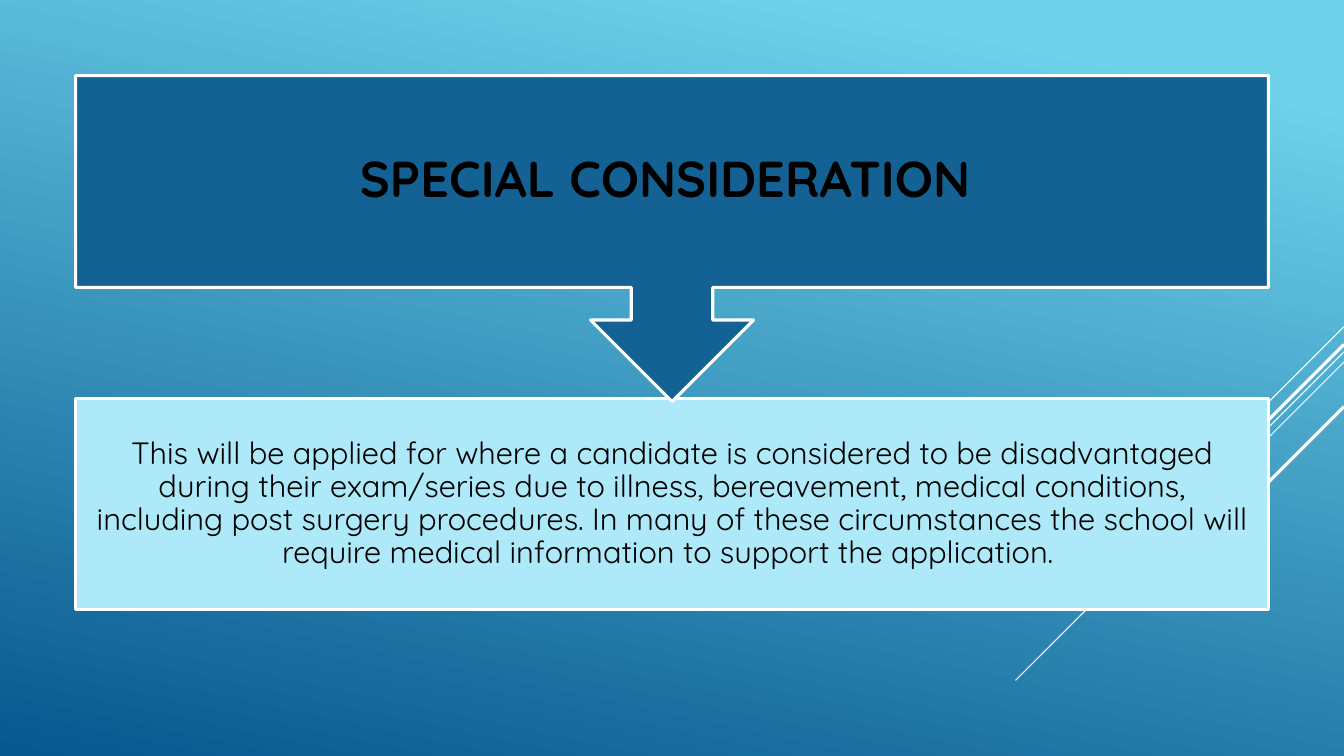
from lxml import etree
from pptx import Presentation
from pptx import util as u
from pptx.dml.color import RGBColor
from pptx.enum import shapes, text
from pptx.oxml.ns import qn

SKY = RGBColor(0x6E, 0xD2, 0xEB)
OCEAN = RGBColor(0x06, 0x58, 0x8E)
NAVY = RGBColor(0x14, 0x61, 0x94)
ICE = RGBColor(0xAD, 0xE9, 0xF8)
WHITE = RGBColor(0xFF, 0xFF, 0xFF)
BLACK = RGBColor(0x00, 0x00, 0x00)

COLUMNS, ROWS = 160, 90
MARGIN = 9
PANEL_WIDTH = COLUMNS - 2 * MARGIN
PANEL_HEIGHT = 25.2
BODY_TOP = 47.4
CALLOUT_HEIGHT = 38.8

TITLE = "SPECIAL CONSIDERATION "
BODY = (
    "This will be applied for where a candidate is considered to be disadvantaged "
    "during their exam/series due to illness, bereavement, medical conditions, "
    "including post surgery procedures. In many of these circumstances the school "
    "will require medical information to support the application. "
)

# Diagonals from the right edge: start row, length in columns, line width
DIAGONALS = [
    (38.9, 12, 0.75),
    (41.9, 39.1, 0.75),
    (43.1, 24.9, 0.75),
    (41, 22.9, 2.25),
    (48.4, 16.7, 2.25),
]


class SlideBuilder:
    font = "Quicksand"
    outline = 2.25

    def __init__(self, deck):
        self.page = deck.slides.add_slide(deck.slide_layouts[6])
        self.column = deck.slide_width / COLUMNS
        self.row = deck.slide_height / ROWS

    def place(self, left, top, width, height):
        return (round(left * self.column), round(top * self.row),
                round(width * self.column), round(height * self.row))

    def background(self, start, end, clockwise_angle):
        fill = self.page.background.fill
        fill.gradient()
        fill.gradient_angle = 360 - clockwise_angle
        for stop, (color, position) in zip(fill.gradient_stops, (start, end)):
            stop.color.rgb = color
            stop.position = position

    def diagonal(self, top, length, width):
        left, start, reach, drop = self.place(COLUMNS, top, length, length)
        line = self.page.shapes.add_connector(
            shapes.MSO_CONNECTOR.STRAIGHT, left, start, left - reach, start + drop)
        line.line.color.rgb = WHITE
        line.line.width = u.Pt(width)
        etree.SubElement(line._element.spPr, qn("a:effectLst"))

    def panel(self, kind, top, height, color, rotation=0):
        panel = self.page.shapes.add_shape(
            kind, *self.place(MARGIN, top, PANEL_WIDTH, height))
        panel.shadow.inherit = False
        panel.rotation = rotation
        panel.fill.solid()
        panel.fill.fore_color.rgb = color
        panel.line.color.rgb = WHITE
        panel.line.width = u.Pt(self.outline)

    def label(self, words, top, size, inset, bold=False):
        box = self.page.shapes.add_textbox(
            *self.place(MARGIN, top, PANEL_WIDTH, PANEL_HEIGHT))
        frame = box.text_frame
        frame.word_wrap = True
        frame.vertical_anchor = text.MSO_ANCHOR.MIDDLE
        frame.margin_left = frame.margin_right = u.Inches(inset)
        frame.margin_top = frame.margin_bottom = u.Inches(inset)
        para = frame.paragraphs[0]
        para.text = words
        para.alignment = text.PP_ALIGN.CENTER
        para.line_spacing = 0.9
        para.font.name = self.font
        para.font.size = u.Pt(size)
        para.font.bold = bold
        para.font.color.rgb = BLACK


def main():
    deck = Presentation()
    deck.slide_width, deck.slide_height = u.Inches(13.33), u.Inches(7.5)
    slide = SlideBuilder(deck)

    # Backdrop
    slide.background((SKY, 0.1), (OCEAN, 1), 102)
    for diagonal in DIAGONALS:
        slide.diagonal(*diagonal)

    # Explanation
    slide.panel(shapes.MSO_SHAPE.RECTANGLE, BODY_TOP, PANEL_HEIGHT, ICE)
    slide.label(BODY, BODY_TOP, 22, 0.17)

    # Heading with an arrow down to the explanation
    slide.panel(shapes.MSO_SHAPE.UP_ARROW_CALLOUT, MARGIN, CALLOUT_HEIGHT, NAVY, 180)
    slide.label(TITLE, MARGIN, 36, 0.28, bold=True)

    deck.save("out.pptx")


if __name__ == "__main__":
    main()
